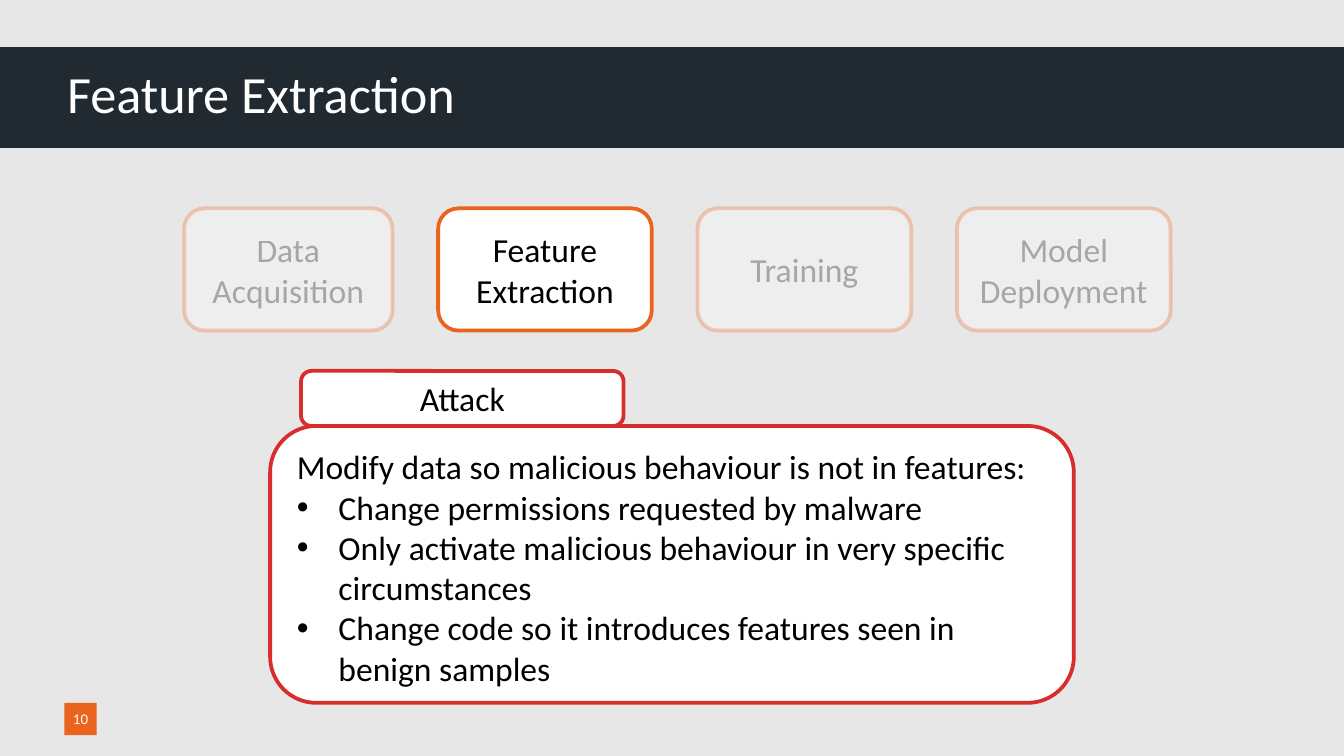
"""Build the Feature Extraction slide: pipeline stages and the attack on one of them."""
from dataclasses import dataclass

from lxml import etree
from pptx import Presentation
from pptx.dml.color import RGBColor
from pptx.enum.shapes import MSO_SHAPE
from pptx.enum.text import MSO_ANCHOR, PP_ALIGN
from pptx.oxml.ns import qn
from pptx.util import Inches, Pt

RECTANGLE, ROUNDED = MSO_SHAPE.RECTANGLE, MSO_SHAPE.ROUNDED_RECTANGLE
TOP, MIDDLE = MSO_ANCHOR.TOP, MSO_ANCHOR.MIDDLE
LEFT, CENTER = PP_ALIGN.LEFT, PP_ALIGN.CENTER


@dataclass(frozen=True)
class Theme:
    background: RGBColor = RGBColor.from_string("E7E7E7")
    banner: RGBColor = RGBColor.from_string("202A30")
    accent: RGBColor = RGBColor.from_string("EB641E")
    attack: RGBColor = RGBColor.from_string("D72D2D")
    white: RGBColor = RGBColor.from_string("FFFFFF")
    black: RGBColor = RGBColor.from_string("000000")
    font: str = "Calibri"
    title_size: int = 28
    body_size: int = 18
    number_size: int = 8
    outline: int = 2
    faded_alpha: str = "30000"


THEME = Theme()


def add_box(kind, left, top, width, height, fill, line=None):
    box = slide.shapes.add_shape(kind, Inches(left), Inches(top), Inches(width), Inches(height))
    box.shadow.inherit = False
    box.fill.solid()
    box.fill.fore_color.rgb = fill
    if line is None:
        box.line.fill.background()
    else:
        box.line.color.rgb = line
        box.line.width = Pt(THEME.outline)
    return box


def write(box, lines, size, color, align=CENTER, anchor=MIDDLE, margin=None):
    frame = box.text_frame
    frame.word_wrap = True
    frame.vertical_anchor = anchor
    if margin is not None:
        frame.margin_left = frame.margin_right = Inches(margin)
        frame.margin_top = frame.margin_bottom = Inches(margin)
    for index, line in enumerate(lines):
        para = frame.add_paragraph() if index else frame.paragraphs[0]
        para.alignment = align
        span = para.add_run()
        span.text = line
        span.font.name = THEME.font
        span.font.size = Pt(size)
        span.font.color.rgb = color


deck = Presentation()
deck.slide_width = Inches(10)
deck.slide_height = Inches(10 * 9 / 16)
page = deck.slide_layouts[6]
slide = deck.slides.add_slide(page)
slide.background.fill.solid()
slide.background.fill.fore_color.rgb = THEME.background

add_box(RECTANGLE, 0, 0.35, 10, 0.75, THEME.banner)
title = slide.shapes.add_textbox(Inches(0.5), Inches(0.31), Inches(7.59), Inches(0.76))
write(title, ["Feature Extraction"], THEME.title_size, THEME.white, align=LEFT, margin=0)

number = add_box(RECTANGLE, 0.48, 5.23, 0.24, 0.24, THEME.accent)
write(number, ["10"], THEME.number_size, THEME.white, margin=0)

heading = add_box(ROUNDED, 2.24, 2.76, 2.4, 0.41, THEME.white, THEME.attack)
heading.adjustments[0] = 0.19
write(heading, ["Attack"], THEME.body_size, THEME.black)

details = add_box(ROUNDED, 2.01, 3.17, 5.98, 2.06, THEME.white, THEME.attack)
write(details, [
    "Modify data so malicious behaviour is not in features:",
    "Change permissions requested by malware",
    "Only activate malicious behaviour in very specific circumstances",
    "Change code so it introduces features seen in benign samples",
], THEME.body_size, THEME.black, align=LEFT, anchor=TOP)
for para in details.text_frame.paragraphs[1:]:
    properties = para._p.get_or_add_pPr()
    properties.set("marL", str(Inches(0.31)))
    properties.set("indent", str(Inches(-0.31)))
    etree.SubElement(properties, qn("a:buFont"), typeface="Arial")
    etree.SubElement(properties, qn("a:buChar"), char="•")

stages = [
    (["Data Acquisition"], 1.55, True),
    (["Feature", "Extraction"], 1.59, False),
    (["Training"], 1.59, True),
    (["Model Deployment"], 1.59, True),
]
for index, (lines, width, faded) in enumerate(stages):
    right = 2.92 + 1.93 * index
    stage = add_box(ROUNDED, right - width, 1.55, width, 0.91, THEME.white, THEME.accent)
    write(stage, lines, THEME.body_size, THEME.black)
    if faded:
        for color in stage._element.iter(qn("a:srgbClr")):
            etree.SubElement(color, qn("a:alpha"), val=THEME.faded_alpha)

deck.save("out.pptx")
